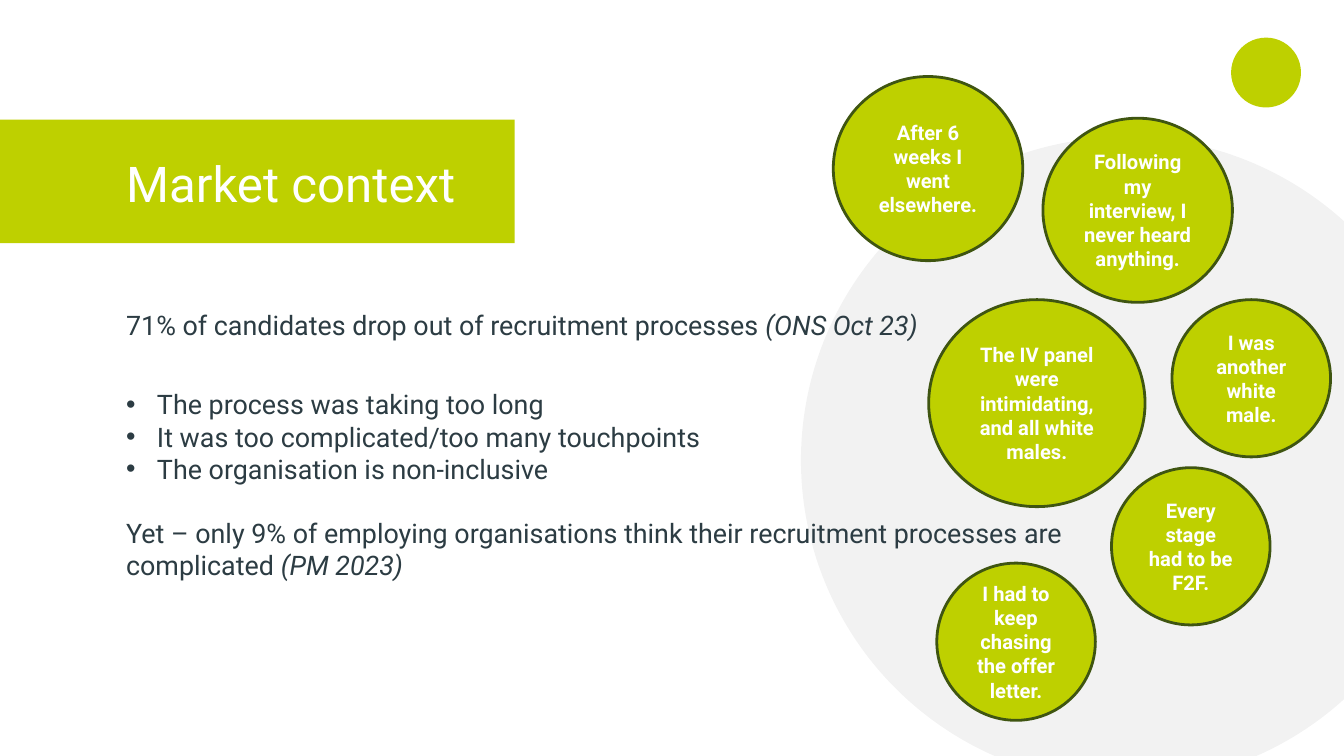
from typing import NamedTuple, Optional

from lxml.etree import SubElement
from pptx import Presentation
from pptx.dml.color import RGBColor
from pptx.enum.shapes import MSO_SHAPE
from pptx.enum.text import MSO_ANCHOR, PP_ALIGN
from pptx.oxml.ns import qn
from pptx.util import Inches, Pt

LIME = RGBColor(0xBE, 0xD0, 0x00)
OLIVE = RGBColor(0x3F, 0x55, 0x11)
SLATE = RGBColor(0x2C, 0x3C, 0x43)
WHITE = RGBColor(0xFF, 0xFF, 0xFF)
BLACK = RGBColor(0x00, 0x00, 0x00)

FONT = "Roboto"
WIDTH = Inches(10)
HEIGHT = WIDTH * 9 // 16
INDENT = Inches(0.23)


class Box(NamedTuple):
    """Left and width in percent of slide width, top and height of slide height."""
    x: float
    y: float
    w: float
    h: float

    def emu(self) -> tuple:
        return (int(self.x * WIDTH / 100), int(self.y * HEIGHT / 100),
                int(self.w * WIDTH / 100), int(self.h * HEIGHT / 100))


class Para(NamedTuple):
    text: str
    source: str = ""
    bullet: bool = False
    before: float = 0


class Quote(NamedTuple):
    text: str
    x: float
    y: float
    size: tuple


SMALL, MEDIUM, LARGE = (11.8, 20.8), (14.1, 24.36), (16.1, 27.38)

QUOTES = [
    Quote("After 6 weeks I went elsewhere.", 62, 10.13, MEDIUM),
    Quote("Every stage had to be F2F.", 82.7, 61.87, SMALL),
    Quote("I was another white male.", 87.2, 39.64, SMALL),
    Quote("The IV panel were intimidating, and all white males.", 69.1, 39.64, LARGE),
    Quote("Following my interview, I never heard anything.", 77.6, 15.64, MEDIUM),
    Quote("I had to keep chasing the offer letter.", 69.7, 74.49, SMALL),
]

BODY = [
    Para("71% of candidates drop out of recruitment processes ", "(ONS Oct 23)"),
    Para("The process was taking too long", bullet=True, before=25),
    Para("It was too complicated/too many touchpoints", bullet=True),
    Para("The organisation is non-inclusive", bullet=True),
    Para("Yet – only 9% of employing organisations think their recruitment "
         "processes are complicated ", "(PM 2023)", before=17),
]


def add_bullet(p) -> None:
    pPr = p._p.get_or_add_pPr()
    pPr.set("marL", str(INDENT))
    pPr.set("indent", str(-INDENT))
    SubElement(pPr, qn("a:buFont"), typeface="Arial")
    SubElement(pPr, qn("a:buChar"), char="•")


def write(tf, paras: list[Para], *, size: float, color: RGBColor,
          bold: bool = False, align: PP_ALIGN = PP_ALIGN.LEFT) -> None:
    tf.word_wrap = True
    for i, para in enumerate(paras):
        p = tf.add_paragraph() if i else tf.paragraphs[0]
        p.alignment = align
        if para.before:
            p.space_before = Pt(para.before)
        if para.bullet:
            add_bullet(p)
        for text, italic in ((para.text, False), (para.source, True)):
            if text:
                r = p.add_run()
                r.text = text
                r.font.name, r.font.size = FONT, Pt(size)
                r.font.bold, r.font.italic = bold, italic
                r.font.color.rgb = color


def add_filled(slide, kind: MSO_SHAPE, box: Box, fill: RGBColor,
               line: Optional[RGBColor] = None, opacity: int = 100):
    sp = slide.shapes.add_shape(kind, *box.emu())
    sp.shadow.inherit = False
    sp.fill.solid()
    sp.fill.fore_color.rgb = fill
    if opacity < 100:
        clr = sp._element.spPr.find(qn("a:solidFill"))[0]
        SubElement(clr, qn("a:alpha"), val=str(opacity * 1000))
    if line is None:
        sp.line.fill.background()
    else:
        sp.line.color.rgb = line
        sp.line.width = Pt(1.5)
    return sp


def add_text(slide, box: Box, paras: list[Para], **fmt) -> None:
    write(slide.shapes.add_textbox(*box.emu()).text_frame, paras, **fmt)


def add_quote(slide, quote: Quote) -> None:
    sp = add_filled(slide, MSO_SHAPE.FLOWCHART_CONNECTOR,
                    Box(quote.x, quote.y, *quote.size), LIME, OLIVE)
    tf = sp.text_frame
    tf.vertical_anchor = MSO_ANCHOR.MIDDLE
    write(tf, [Para(quote.text)], size=10.8, color=WHITE, bold=True,
          align=PP_ALIGN.CENTER)


def main() -> None:
    prs = Presentation()
    prs.slide_width, prs.slide_height = WIDTH, HEIGHT
    slide = prs.slides.add_slide(prs.slide_layouts[6])

    add_filled(slide, MSO_SHAPE.OVAL, Box(91.6, 4.98, 5.2, 9.24), LIME)
    add_filled(slide, MSO_SHAPE.OVAL, Box(59.6, 18.13, 48.3, 85.51), BLACK, opacity=5)
    add_text(slide, Box(8.4, 40, 76.3, 44.09), BODY, size=14.4, color=SLATE)
    add_filled(slide, MSO_SHAPE.RECTANGLE, Box(0, 15.82, 38.3, 16.36), LIME)
    add_text(slide, Box(8.4, 19.38, 28.4, 9.78), [Para("Market context")],
             size=26.4, color=WHITE)
    for quote in QUOTES:
        add_quote(slide, quote)

    prs.save("out.pptx")


if __name__ == "__main__":
    main()
